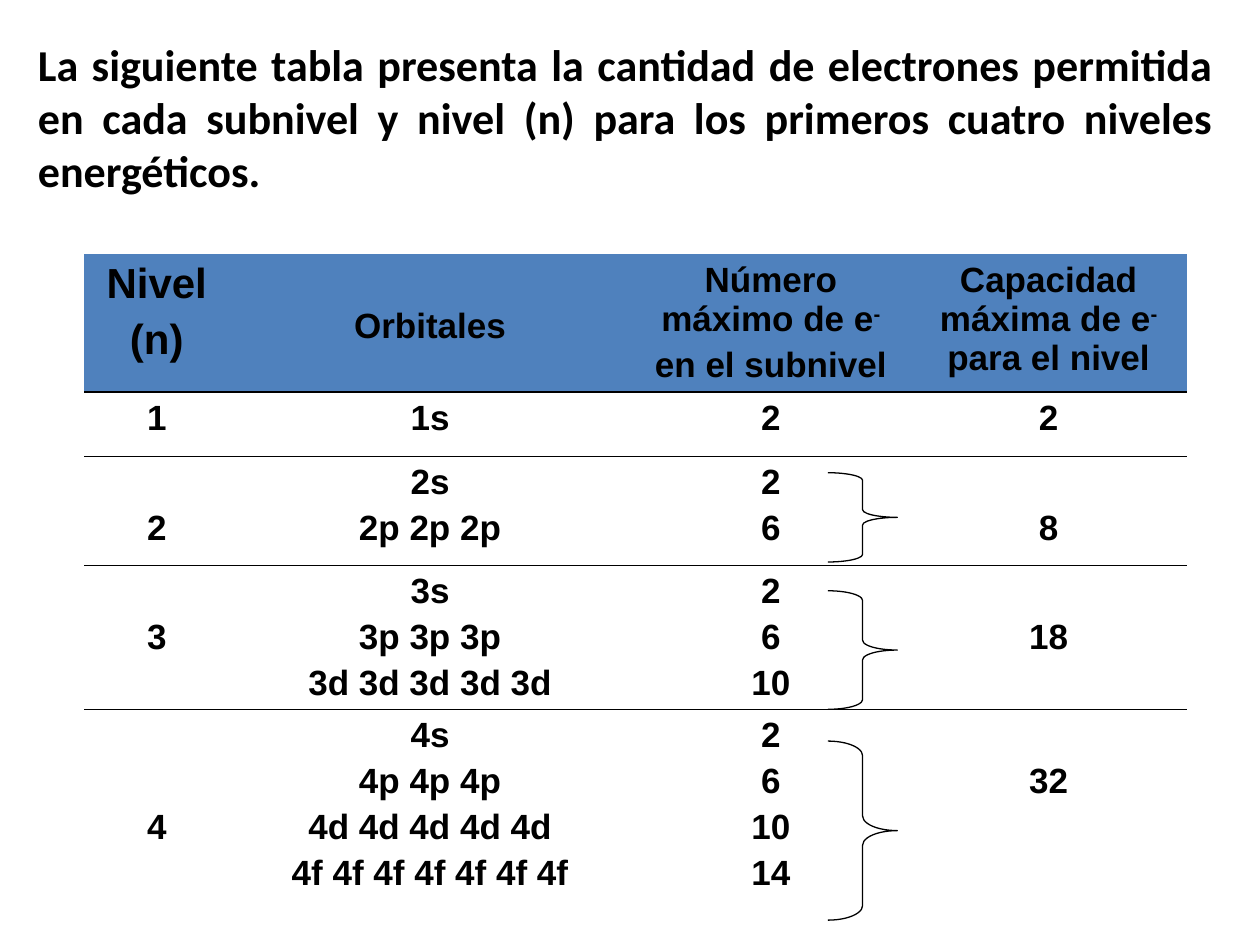
"""Build the slide on electrons allowed per sublevel and energy level."""
from lxml.etree import SubElement
from pptx import Presentation
from pptx.dml.color import RGBColor
from pptx.enum.shapes import MSO_SHAPE
from pptx.enum.text import MSO_ANCHOR, MSO_AUTO_SIZE, PP_ALIGN
from pptx.oxml import parse_xml
from pptx.oxml.ns import nsdecls, qn
from pptx.util import Cm, Pt

COLORS = {"text": "000000", "header": "4F81BD", "rule": "000000"}
NO_STYLE = "{2D5ABB26-0587-4C30-8999-92F81FD0307C}"
LINE_PITCH = 0.93


def format_paragraph(paragraph, font, size, align):
    paragraph.alignment = align
    paragraph.font.name = font
    paragraph.font.size = Pt(size)
    paragraph.font.bold = True
    paragraph.font.color.rgb = RGBColor.from_string(COLORS["text"])


def add_bottom_rule(cell):
    properties = cell._tc.get_or_add_tcPr()
    rule = parse_xml(f'<a:lnB {nsdecls("a")} w="{Pt(1)}"/>')
    fill = SubElement(rule, qn("a:solidFill"))
    SubElement(fill, qn("a:srgbClr"), val=COLORS["rule"])
    properties.insert(0, rule)


prs = Presentation()
prs.slide_width, prs.slide_height = Cm(25.4), Cm(19.05)
slide = prs.slides.add_slide(prs.slide_layouts[5])

heading = slide.shapes.title
heading.left, heading.top, heading.width, heading.height = Cm(0.51), Cm(0.76), Cm(24.2), Cm(3.18)
heading.text_frame.text = (
    "La siguiente tabla presenta la cantidad de electrones permitida en cada "
    "subnivel y nivel (n) para los primeros cuatro niveles energéticos."
)
heading.text_frame.auto_size = MSO_AUTO_SIZE.NONE
heading.text_frame.vertical_anchor = MSO_ANCHOR.MIDDLE
format_paragraph(heading.text_frame.paragraphs[0], "Calibri", 25.2, PP_ALIGN.JUSTIFY)

column_widths = [2.92, 8.1, 5.64, 5.56]
row_heights = [2.77, 1.3, 2.2, 2.9, 4.27]
rows = [
    ["Nivel\n(n)", "Orbitales", "Número máximo de e^-^\nen el subnivel",
     "Capacidad máxima de e^-^ para el nivel"],
    ["1", "1s", "2", "2"],
    ["2", "2s\n2p 2p 2p", "2\n6", "8"],
    ["3", "3s\n3p 3p 3p\n3d 3d 3d 3d 3d", "2\n6\n10", "18"],
    ["4", "4s\n4p 4p 4p\n4d 4d 4d 4d 4d\n4f 4f 4f 4f 4f 4f 4f", "2\n6\n10\n14", "32"],
]
lines_down = {(0, 1): 1, (2, 0): 1, (2, 3): 1, (3, 0): 1, (3, 3): 1, (4, 0): 2, (4, 3): 1}

levels = slide.shapes.add_table(
    len(rows), len(column_widths), Cm(1.7), Cm(5.13), Cm(sum(column_widths)), Cm(sum(row_heights))
).table
levels.horz_banding = False
levels._tbl.tblPr.find(qn("a:tableStyleId")).text = NO_STYLE
for column, width in zip(levels.columns, column_widths):
    column.width = Cm(width)

for r, (entries, height) in enumerate(zip(rows, row_heights)):
    levels.rows[r].height = Cm(height)
    for c, entry in enumerate(entries):
        cell = levels.cell(r, c)
        cell.margin_top = Cm(0.13 + LINE_PITCH * lines_down.get((r, c), 0))
        if r == 0:
            cell.fill.solid()
            cell.fill.fore_color.rgb = RGBColor.from_string(COLORS["header"])
        else:
            cell.fill.background()
        if r < len(rows) - 1:
            add_bottom_rule(cell)
        size = 24 if (r, c) == (0, 0) else 20
        for i, line in enumerate(entry.split("\n")):
            paragraph = cell.text_frame.paragraphs[0] if i == 0 else cell.text_frame.add_paragraph()
            format_paragraph(paragraph, "Arial", size, PP_ALIGN.CENTER)
            paragraph.space_before = Pt(size * 0.2)
            for part, words in enumerate(line.split("^")):
                if words:
                    run = paragraph.add_run()
                    run.text = words
                    if part % 2:
                        run.font._element.set("baseline", "30000")

for top, height, curve in [(9.53, 1.8, 0.11), (11.91, 2.39, 0.14), (14.94, 3.61, 0.21)]:
    brace = slide.shapes.add_shape(MSO_SHAPE.RIGHT_BRACE, Cm(16.69), Cm(top), Cm(1.4), Cm(height))
    brace.adjustments[0] = curve
    brace.shadow.inherit = False
    brace.fill.background()
    brace.line.color.rgb = RGBColor.from_string(COLORS["rule"])
    brace.line.width = Pt(0.75)

prs.save("out.pptx")
